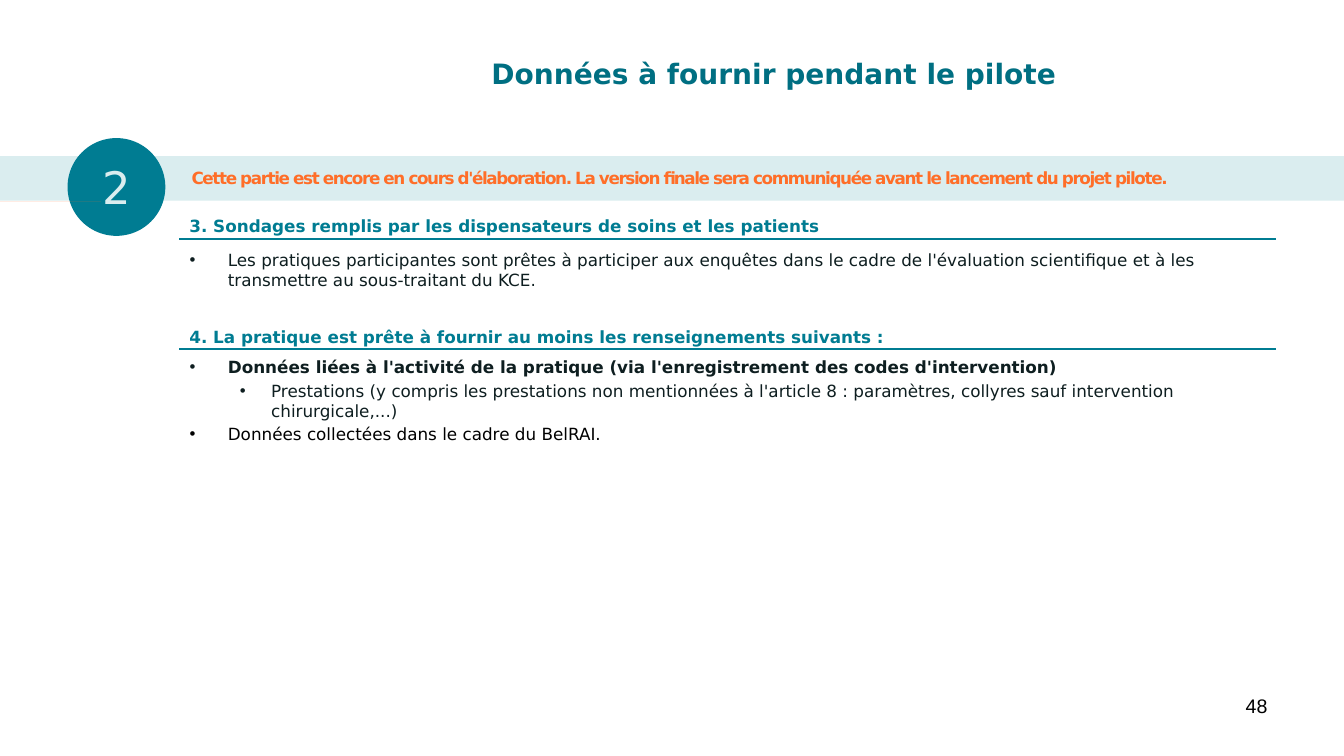
from lxml.etree import SubElement
from pptx import Presentation
from pptx.dml.color import RGBColor
from pptx.enum.shapes import MSO_CONNECTOR, MSO_SHAPE
from pptx.enum.text import MSO_ANCHOR, MSO_AUTO_SIZE, PP_ALIGN
from pptx.oxml.ns import qn
from pptx.util import Inches, Pt

TITLE = "Données à fournir pendant le pilote"
NOTICE = ("Cette partie est encore en cours d'élaboration. "
          "La version finale sera communiquée avant le lancement du projet pilote.")
STEP = "2"
PAGE = "48"
COLORS = {"title": "006F82", "teal": "007C92", "pale": "DAEDEF",
          "orange": "FF6E28", "ink": "0E1E20", "black": "000000"}
FONT = "DejaVu Sans"

# Each item: text, level, bold, colour
SECTIONS = [
    {"heading": "3. Sondages remplis par les dispensateurs de soins et les patients",
     "top": 2.09, "rule": 2.37, "list_top": 2.43, "list_height": 0.71,
     "items": [
         ("Les pratiques participantes sont prêtes à participer aux enquêtes dans le cadre "
          "de l'évaluation scientifique et à les transmettre au sous-traitant du KCE.",
          0, False, "ink")]},
    {"heading": "4. La pratique est prête à fournir au moins les renseignements suivants :",
     "top": 3.19, "rule": 3.46, "list_top": 3.49, "list_height": 1.35,
     "items": [
         ("Données liées à l'activité de la pratique (via l'enregistrement des codes "
          "d'intervention)", 0, True, "ink"),
         ("Prestations (y compris les prestations non mentionnées à l'article 8\u00a0: "
          "paramètres, collyres sauf intervention chirurgicale,...)", 1, False, "ink"),
         ("Données collectées dans le cadre du BelRAI.", 0, False, "black")]},
]
INDENTS = [(0.38, -0.38), (0.81, -0.31)]  # left margin, first line, by level
LEFT, WIDTH = 1.78, 10.88

# Outlines of the crossed tools, in inches
TOOLS = [
    [(0.26, 1.73), (0.3, 1.78), (0.26, 1.81), (0.21, 1.81), (0.16, 1.85), (0.15, 1.9),
     (0.21, 1.85), (0.25, 1.88), (0.27, 1.92), (0.21, 1.97), (0.26, 1.97), (0.3, 1.93),
     (0.31, 1.86), (0.34, 1.83), (0.46, 1.97), (0.5, 1.96), (0.53, 1.91), (0.3, 1.69)],
    [(0.5, 1.69), (0.46, 1.66), (0.44, 1.62), (0.5, 1.57), (0.45, 1.57), (0.41, 1.61),
     (0.4, 1.67), (0.37, 1.71), (0.42, 1.76), (0.45, 1.73), (0.51, 1.73), (0.55, 1.69),
     (0.56, 1.64)],
    [(0.19, 1.78), (0.21, 1.75), (0.2, 1.73), (0.22, 1.72), (0.24, 1.72), (0.29, 1.67),
     (0.28, 1.65), (0.28, 1.63), (0.3, 1.62), (0.32, 1.61), (0.34, 1.62), (0.36, 1.61),
     (0.34, 1.58), (0.31, 1.57), (0.25, 1.57), (0.21, 1.6), (0.16, 1.64), (0.17, 1.66),
     (0.15, 1.68), (0.12, 1.68), (0.11, 1.7), (0.18, 1.78)],
]


def color(key):
    return RGBColor.from_string(COLORS[key])


def place(shape, left, top, width, height):
    shape.left, shape.top = Inches(left), Inches(top)
    shape.width, shape.height = Inches(width), Inches(height)


def style(paragraph, size, key, bold=False, font=FONT, align=PP_ALIGN.LEFT):
    paragraph.alignment = align
    paragraph.font.name = font
    paragraph.font.size = Pt(size)
    paragraph.font.bold = bold
    paragraph.font.color.rgb = color(key)


def write(shape, text, size, key, anchor=MSO_ANCHOR.TOP, **look):
    frame = shape.text_frame
    frame.word_wrap = True
    frame.vertical_anchor = anchor
    frame.text = text
    style(frame.paragraphs[0], size, key, **look)
    return frame.paragraphs[0]


def add_plain_shape(kind, box, fill=None):
    """Add a shape without line or shadow, filled only when a colour is given."""
    shape = slide.shapes.add_shape(kind, *map(Inches, box))
    shape.shadow.inherit = False
    shape.line.fill.background()
    if fill:
        shape.fill.solid()
        shape.fill.fore_color.rgb = color(fill)
    else:
        shape.fill.background()
    return shape


def add_label(box, text, size, key, **look):
    write(slide.shapes.add_textbox(*map(Inches, box)), text, size, key, **look)


def fill_list(body, items):
    frame = body.text_frame
    frame.auto_size = MSO_AUTO_SIZE.NONE
    for i, (text, level, bold, key) in enumerate(items):
        paragraph = frame.add_paragraph() if i else frame.paragraphs[0]
        paragraph.text = text
        paragraph.level = level
        paragraph.space_before = Pt(2.4 if i else 0)
        margin, first_line = INDENTS[level]
        properties = paragraph._p.get_or_add_pPr()
        properties.set("marL", str(Inches(margin)))
        properties.set("indent", str(Inches(first_line)))
        SubElement(properties, qn("a:buFont"), typeface="Arial")
        SubElement(properties, qn("a:buChar"), char="•")
        style(paragraph, 12, key, bold)


def add_rule(y):
    rule = slide.shapes.add_connector(MSO_CONNECTOR.STRAIGHT, Inches(LEFT), Inches(y),
                                      Inches(LEFT + WIDTH), Inches(y))
    rule.line.color.rgb = color("teal")
    rule.line.width = Pt(1.5)
    SubElement(rule._element.spPr, qn("a:effectLst"))


def add_tools():
    builder = slide.shapes.build_freeform(*TOOLS[0][0], scale=Inches(1))
    for i, outline in enumerate(TOOLS):
        if i:
            builder.move_to(*outline[0])
        builder.add_line_segments(outline[1:], close=True)
    tools = builder.convert_to_shape()
    tools.shadow.inherit = False
    tools.fill.solid()
    tools.fill.fore_color.rgb = color("orange")
    tools.line.fill.background()


prs = Presentation()
prs.slide_width, prs.slide_height = Inches(13.33), Inches(7.5)
slide = prs.slides.add_slide(prs.slide_layouts[3])
title, *bodies = slide.placeholders

add_plain_shape(MSO_SHAPE.RECTANGLE, (0, 1.55, 13.33, 0.44), "pale")
place(title, 2.68, 0.3, 9.99, 0.85)
write(title, TITLE, 20, "title", MSO_ANCHOR.MIDDLE, bold=True, align=PP_ALIGN.CENTER)
add_label((9.56, 6.83, 3.11, 0.52), PAGE, 14, "black", font="Arial", align=PP_ALIGN.RIGHT)

for section, body in zip(SECTIONS, bodies):
    add_label((LEFT, section["top"], WIDTH, 0.3), section["heading"], 12, "teal", bold=True)
    add_rule(section["rule"])
    place(body, LEFT, section["list_top"], WIDTH, section["list_height"])
    fill_list(body, section["items"])

badge = add_plain_shape(MSO_SHAPE.OVAL, (0.67, 1.37, 0.97, 0.97), "teal")
write(badge, STEP, 32, "pale", MSO_ANCHOR.MIDDLE, align=PP_ALIGN.CENTER)
notice = add_plain_shape(MSO_SHAPE.ROUNDED_RECTANGLE, (LEFT, 1.54, 11.22, 0.45))
notice_line = write(notice, NOTICE, 12, "orange", MSO_ANCHOR.MIDDLE, bold=True)
notice_line.runs[0].font._element.set("spc", "-100")
add_tools()

prs.save("out.pptx")
